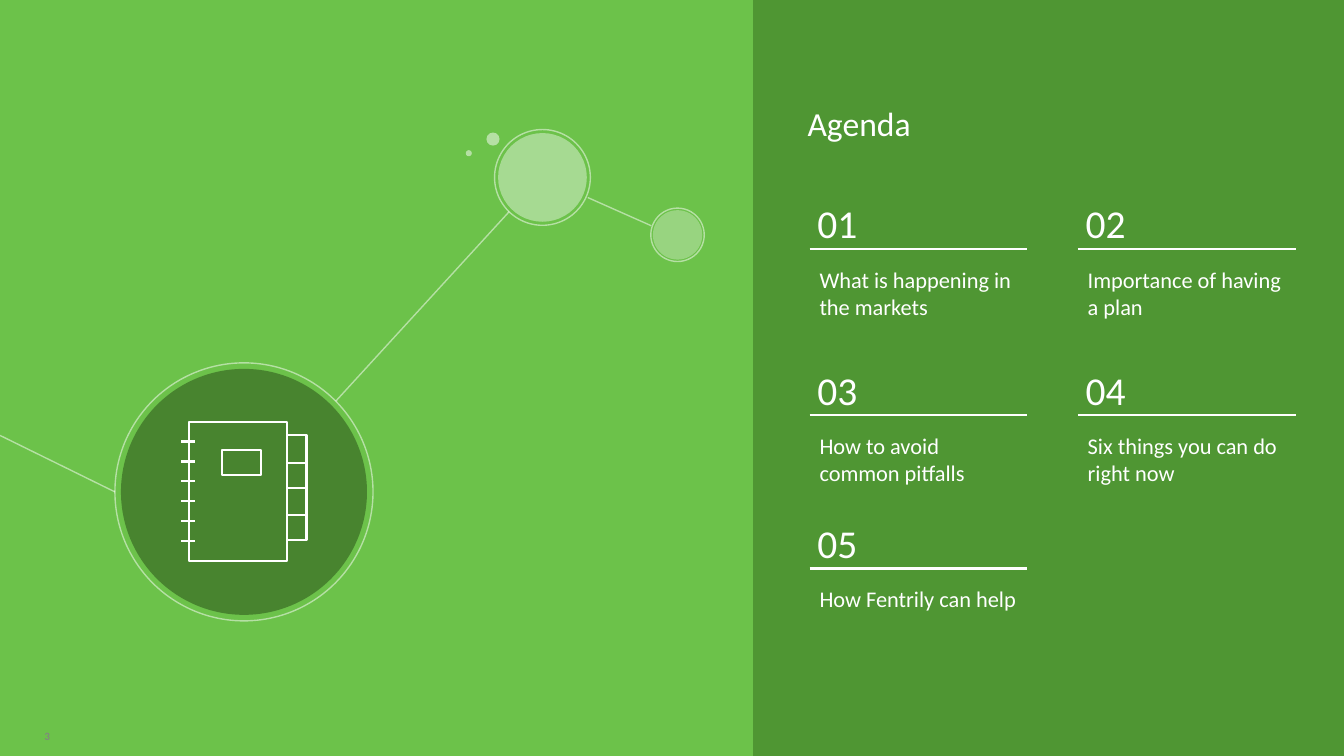
from lxml import etree
from pptx import Presentation
from pptx import util as u
from pptx.dml.color import RGBColor
from pptx.enum import shapes, text
from pptx.oxml.ns import qn

WHITE = RGBColor(0xFF, 0xFF, 0xFF)
LIGHT_GREEN = RGBColor(0x6C, 0xC2, 0x4A)
PANEL_GREEN = RGBColor(0x4F, 0x96, 0x33)
DEEP_GREEN = RGBColor(0x35, 0x64, 0x22)
GREY = RGBColor(0x7F, 0x8C, 0x7A)

RECT = shapes.MSO_SHAPE.RECTANGLE
OVAL = shapes.MSO_SHAPE.OVAL


class Painter:
    """Holds the style and the current slide."""

    font = "Calibri"

    def __init__(self, page):
        self.page = page

    def fade(self, part, opacity):
        """Set the opacity, in percent, of a part's fill or line colour."""
        if opacity < 100:
            for colour in part.iter(qn("a:srgbClr")):
                alpha = etree.SubElement(colour, qn("a:alpha"))
                alpha.set("val", str(opacity * 1000))

    def shape(self, kind, left, top, width, height, fill=None, line=None, opacity=100):
        """Add a preset shape; line is a width in points for a white outline."""
        shape = self.page.shapes.add_shape(
            kind, u.Inches(left), u.Inches(top), u.Inches(width), u.Inches(height))
        shape.shadow.inherit = False
        if fill is None:
            shape.fill.background()
        else:
            shape.fill.solid()
            shape.fill.fore_color.rgb = fill
        if line is None:
            shape.line.fill.background()
        else:
            shape.line.color.rgb = WHITE
            shape.line.width = u.Pt(line)
        self.fade(shape.element.spPr, opacity)

    def circle(self, x, y, diameter, **style):
        """Add a circle around a centre."""
        self.shape(OVAL, x - diameter / 2, y - diameter / 2, diameter, diameter, **style)

    def line(self, x1, y1, x2, y2, width, opacity=100):
        line = self.page.shapes.add_connector(
            shapes.MSO_CONNECTOR.STRAIGHT,
            u.Inches(x1), u.Inches(y1), u.Inches(x2), u.Inches(y2))
        line.line.color.rgb = WHITE
        line.line.width = u.Pt(width)
        self.fade(line.element.spPr, opacity)
        etree.SubElement(line.element.spPr, qn("a:effectLst"))

    def text(self, words, left, top, width, height, size, color=WHITE, bold=False,
             anchor=text.MSO_ANCHOR.TOP, inset=True, spacing=None, after=0):
        box = self.page.shapes.add_textbox(
            u.Inches(left), u.Inches(top), u.Inches(width), u.Inches(height))
        frame = box.text_frame
        frame.word_wrap = True
        frame.vertical_anchor = anchor
        if not inset:
            frame.margin_left = frame.margin_right = 0
            frame.margin_top = frame.margin_bottom = 0
        para = frame.paragraphs[0]
        para.space_after = u.Pt(after)
        if spacing:
            para.line_spacing = u.Pt(spacing)
        span = para.add_run()
        span.text = words
        span.font.name = self.font
        span.font.size = u.Pt(size)
        span.font.bold = bold
        span.font.color.rgb = color

    def agenda_item(self, number, words, left, rule_y):
        """Add a number, the rule below it and the topic."""
        self.line(left, rule_y, left + 2.16, rule_y, 1.75)
        self.text(f"{number:02}", left - 0.02, rule_y - 0.54, 0.84, 0.58, 28.2)
        self.text(words, left, rule_y + 0.12, 2.2, 0.64, 16, after=5.3)


def main():
    deck = Presentation()
    deck.slide_width, deck.slide_height = u.Inches(13.33), u.Inches(7.5)
    painter = Painter(deck.slides.add_slide(deck.slide_layouts[6]))

    # Background and right panel
    painter.shape(RECT, 0, 0, 13.33, 7.5, fill=LIGHT_GREEN)
    painter.shape(RECT, 7.47, 0, 5.86, 7.5, fill=PANEL_GREEN)

    # Title
    painter.text("Agenda", 8.01, 0.42, 4.83, 1, 24,
                 anchor=text.MSO_ANCHOR.BOTTOM, inset=False, spacing=22.9)

    # Agenda in two columns
    topics = ["What is happening in the markets", "Importance of having a plan",
              "How to avoid common pitfalls", "Six things you can do right now",
              "How Fentrily can help"]
    columns = [8.03, 10.69]
    rules = [2.47, 4.12, 5.64]
    for index, topic in enumerate(topics):
        row, column = divmod(index, 2)
        painter.agenda_item(index + 1, topic, columns[column], rules[row])

    # Ringed bubbles: centre, ring, disc, disc opacity
    for x, y, ring, disc, opacity in [(5.38, 1.76, 0.95, 0.88, 40),
                                      (6.72, 2.33, 0.53, 0.49, 30)]:
        painter.circle(x, y, ring, line=1, opacity=50)
        painter.circle(x, y, disc, fill=WHITE, opacity=opacity)

    # Small dots
    painter.circle(4.89, 1.38, 0.13, fill=WHITE, opacity=50)
    painter.circle(4.65, 1.52, 0.06, fill=WHITE, opacity=50)

    # Links between circles
    for ends in [(5.05, 2.1, 3.33, 3.98), (5.83, 1.96, 6.46, 2.24),
                 (1.14, 4.88, 0, 4.32)]:
        painter.line(*ends, 1, opacity=50)

    # Large circle
    painter.circle(2.42, 4.88, 2.44, fill=DEEP_GREEN, opacity=65)
    painter.circle(2.42, 4.88, 2.56, line=1, opacity=50)

    # Notebook: cover, label, binding and tabs
    painter.shape(RECT, 1.87, 4.19, 0.98, 1.38, line=1.5)
    painter.shape(RECT, 2.2, 4.46, 0.39, 0.25, line=1.5)
    for ring in range(6):
        y = 4.38 + ring * 0.198
        painter.line(1.8, y, 1.93, y, 1.5)
    tab_top = 4.32
    for height in (0.27, 0.25, 0.27, 0.25):
        painter.shape(RECT, 2.85, tab_top, 0.19, height, line=1.5)
        tab_top += height

    # Slide number
    painter.text("3", 0.44, 7.2, 0.3, 0.2, 8, color=GREY, bold=True,
                 anchor=text.MSO_ANCHOR.MIDDLE, inset=False)

    deck.save("out.pptx")


if __name__ == "__main__":
    main()
